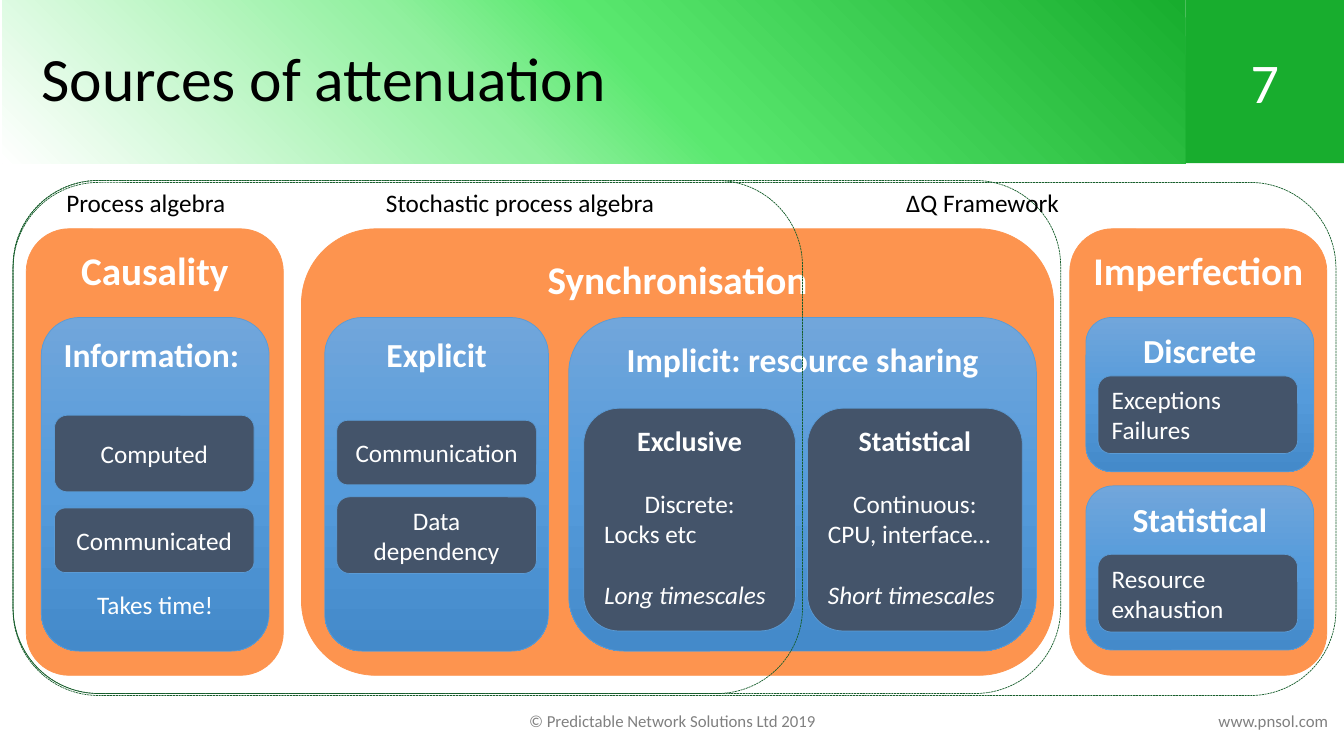
from pptx import Presentation
from pptx.dml.color import RGBColor
from pptx.enum.dml import MSO_LINE
from pptx.enum.shapes import MSO_SHAPE
from pptx.enum.text import MSO_ANCHOR, PP_ALIGN
from pptx.oxml import parse_xml
from pptx.oxml.ns import nsdecls, qn
from pptx.util import Inches, Pt

COLORS = {
    "white": "FFFFFF", "black": "000000", "gray": "808080", "green": "18AD2E",
    "orange": "FD944F", "slate": "44546A", "edge": "5B9BD5", "outline": "175E2C",
}
BLUE_STOPS = [(0, "71A6DB"), (50, "559BDB"), (100, "448ACA")]
TITLE_STOPS = [(0, "FFFFFF"), (40, "91F09F"), (54, "5AE86F"), (100, "18AD2E")]
LINEAR_DOWN = '<a:lin ang="5400000" scaled="0"/>'
FROM_BOTTOM_LEFT = '<a:path path="circle"><a:fillToRect t="100000" r="100000"/></a:path>'
LEFT, CENTER = PP_ALIGN.LEFT, PP_ALIGN.CENTER
TOP, MIDDLE = MSO_ANCHOR.TOP, MSO_ANCHOR.MIDDLE
ITEM_W = 1.98
PANEL_TOP, PANEL_H = 0.88, 3.31


def rgb(name):
    return RGBColor.from_string(COLORS[name])


def set_gradient(sp, stops, direction):
    sp.fill.gradient()
    old = sp._element.spPr.find(qn("a:gradFill"))
    marks = "".join(
        f'<a:gs pos="{pos * 1000}"><a:srgbClr val="{color}"/></a:gs>' for pos, color in stops
    )
    new = parse_xml(
        f'<a:gradFill {nsdecls("a")} rotWithShape="1"><a:gsLst>{marks}</a:gsLst>{direction}</a:gradFill>'
    )
    old.getparent().replace(old, new)


def write(tf, paragraphs, anchor=TOP, color="white"):
    tf.word_wrap = True
    tf.vertical_anchor = anchor
    for i, (text, size, align, before, fmt) in enumerate(paragraphs):
        p = tf.paragraphs[0] if i == 0 else tf.add_paragraph()
        p.alignment = align
        if before:
            p.space_before = Pt(before)
        r = p.add_run()
        r.text = text
        r.font.color.rgb = rgb(color)
        for name, value in {"name": "Calibri", "size": Pt(size), **fmt}.items():
            setattr(r.font, name, value)


def line(text, size=18, align=CENTER, before=0, **fmt):
    return text, size, align, before, fmt


def heading(text, size):
    return line(text, size, bold=True)


def block(s, box, fill, edge, paragraphs=(), anchor=TOP, shape=MSO_SHAPE.ROUNDED_RECTANGLE):
    sp = s.shapes.add_shape(shape, *map(Inches, box))
    sp.shadow.inherit = False
    if fill == "blue":
        set_gradient(sp, BLUE_STOPS, LINEAR_DOWN)
    elif fill:
        sp.fill.solid()
        sp.fill.fore_color.rgb = rgb(fill)
    else:
        sp.fill.background()
    if edge:
        sp.line.color.rgb = rgb(edge)
        sp.line.width = Pt(0.5)
    else:
        sp.line.fill.background()
    write(sp.text_frame, paragraphs, anchor)
    return sp


def group(s, box, title):
    block(s, box, "orange", "orange", [heading(title, 28)])


def panel(s, box, title, *more):
    block(s, box, "blue", "edge", [heading(title, 24), *more])


def item(s, x, y, h, *texts, align=CENTER):
    block(s, (x, y, ITEM_W, h), "slate", "edge", [line(t, align=align) for t in texts], MIDDLE)


def label(s, box, text, size=18, align=LEFT, color="black"):
    tf = s.shapes.add_textbox(*map(Inches, box)).text_frame
    write(tf, [line(text, size, align)], color=color)


def header(s, box, title, number):
    x, y, w, h = box
    number_x = 11.76
    block(s, (number_x, y, x + w - number_x, h), "green", None, [line(number, 40)],
          MIDDLE, MSO_SHAPE.RECTANGLE)
    ph = s.shapes.title
    place = {"left": x + 0.02, "top": y, "width": number_x - x - 0.02, "height": h}
    for name, value in place.items():
        setattr(ph, name, Inches(value))
    set_gradient(ph, TITLE_STOPS, FROM_BOTTOM_LEFT)
    tf = ph.text_frame
    tf.margin_left = Inches(0.39)
    write(tf, [line(title, 44, LEFT)], MIDDLE, "black")
    tf.paragraphs[0].line_spacing = 0.9


def synchronisation(s, box):
    x, y, w, h = box
    group(s, box, "Synchronisation")
    top = y + PANEL_TOP
    panel(s, (x + 0.23, top, 2.22, PANEL_H), "Explicit")
    item(s, x + 0.35, y + 1.9, 0.64, "Communication")
    item(s, x + 0.35, y + 2.66, 0.76, "Data dependency")
    panel(s, (x + 2.65, top, 4.64, PANEL_H), "Implicit: resource sharing")
    kinds = [
        (2.8, 2.1, "Exclusive", "Discrete:", "Locks etc", "Long timescales"),
        (5.02, 2.13, "Statistical", "Continuous:", "CPU, interface…", "Short timescales"),
    ]
    for dx, width, kind, nature, example, timescale in kinds:
        block(s, (x + dx, y + 1.78, width, 2.21), "slate", "edge", [
            heading(kind, 20),
            line(nature, before=22),
            line(example, align=LEFT),
            line(timescale, align=LEFT, before=22, italic=True),
        ])


def causality(s, box):
    x, y, w, h = box
    group(s, box, "Causality")
    panel(s, (x + 0.15, y + PANEL_TOP, 2.26, PANEL_H), "Information: ",
          line("Takes time!", before=154))
    item(s, x + 0.28, y + 1.85, 0.76, "Computed")
    item(s, x + 0.28, y + 2.77, 0.64, "Communicated")


def imperfection(s, box):
    x, y, w, h = box
    group(s, box, "Imperfection")
    kinds = [
        (PANEL_TOP, 1.53, "Discrete", 1.46, ["Exceptions", "Failures"]),
        (2.55, 1.63, "Statistical", 3.23, ["Resource exhaustion"]),
    ]
    for dy, height, kind, item_dy, texts in kinds:
        panel(s, (x + 0.16, y + dy, 2.26, height), kind)
        item(s, x + 0.28, y + item_dy, 0.77, *texts, align=LEFT)


def frameworks(s, box):
    x, y, w, h = box
    for width, dy in [(10.39, 0), (w, 0.02), (7.83, 0)]:
        sp = block(s, (x, y + dy, width, h), None, "outline")
        sp.line.dash_style = MSO_LINE.SQUARE_DOT
    labels = [
        (0.43, 2.43, "Process algebra", LEFT),
        (3.6, 3.73, "Stochastic process algebra", LEFT),
        (7.75, 3.73, "∆Q Framework", CENTER),
    ]
    for dx, width, text, align in labels:
        label(s, (x + dx, y + 0.02, width, 0.4), text, align=align)


def footer(s, box):
    x, y, w, h = box
    label(s, (x + 5.04, y, 3.26, h), "© Predictable Network Solutions Ltd 2019", 12, CENTER, "gray")
    label(s, (x + w - 1.4, y, 1.4, h), "www.pnsol.com", 12, CENTER, "gray")


def main():
    prs = Presentation()
    prs.slide_width, prs.slide_height = Inches(13.33), Inches(7.5)
    s = prs.slides.add_slide(prs.slide_layouts[5])
    header(s, (0, -0.01, 13.33, 1.63), "Sources of attenuation", "7")
    group_y, group_h = 2.27, 4.43
    causality(s, (0.26, group_y, 2.55, group_h))
    synchronisation(s, (2.99, group_y, 7.46, group_h))
    imperfection(s, (10.61, group_y, 2.55, group_h))
    frameworks(s, (0.13, 1.79, 13.12, 5.09))
    footer(s, (0, 7, 13.33, 0.3))
    prs.save("out.pptx")


if __name__ == "__main__":
    main()
